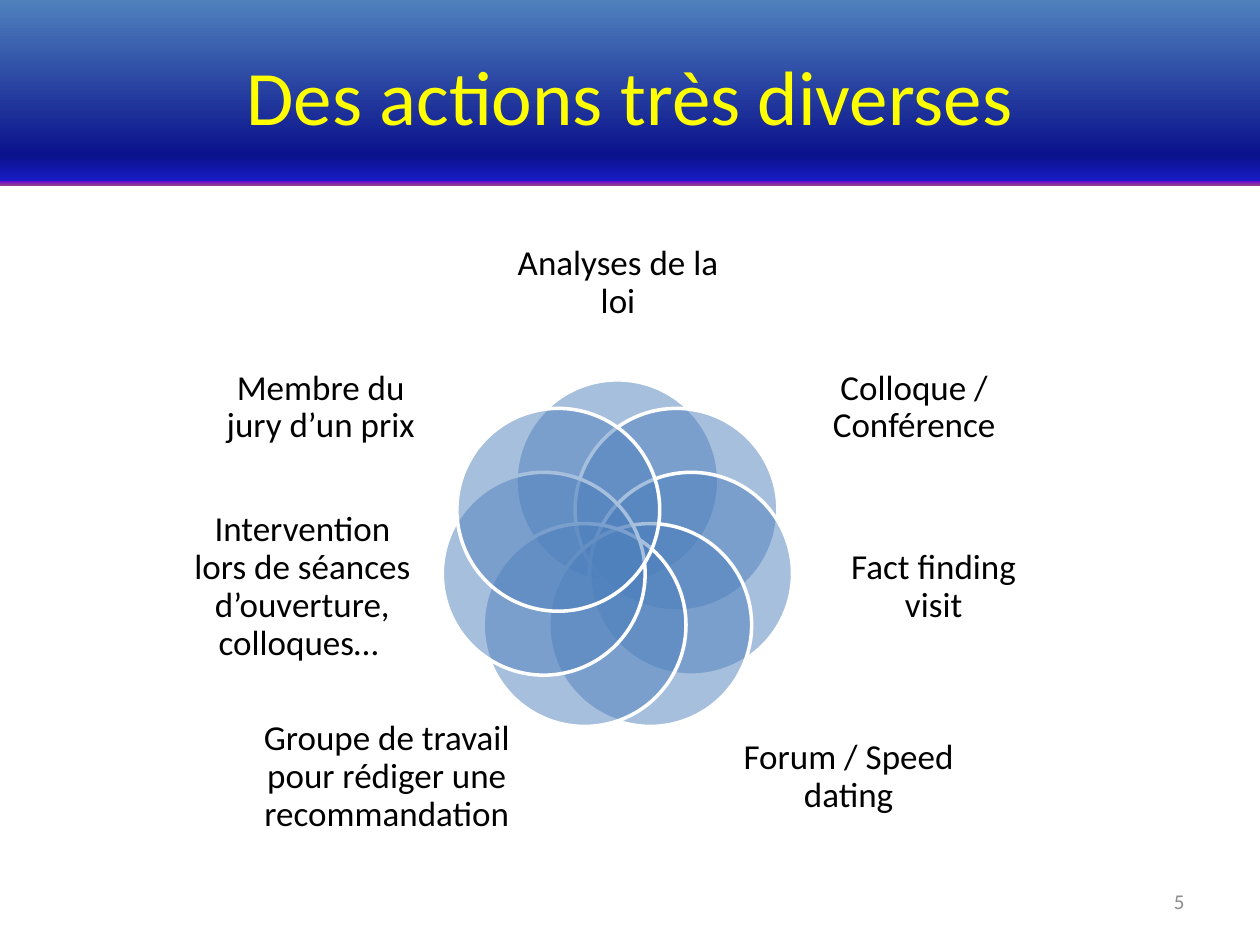
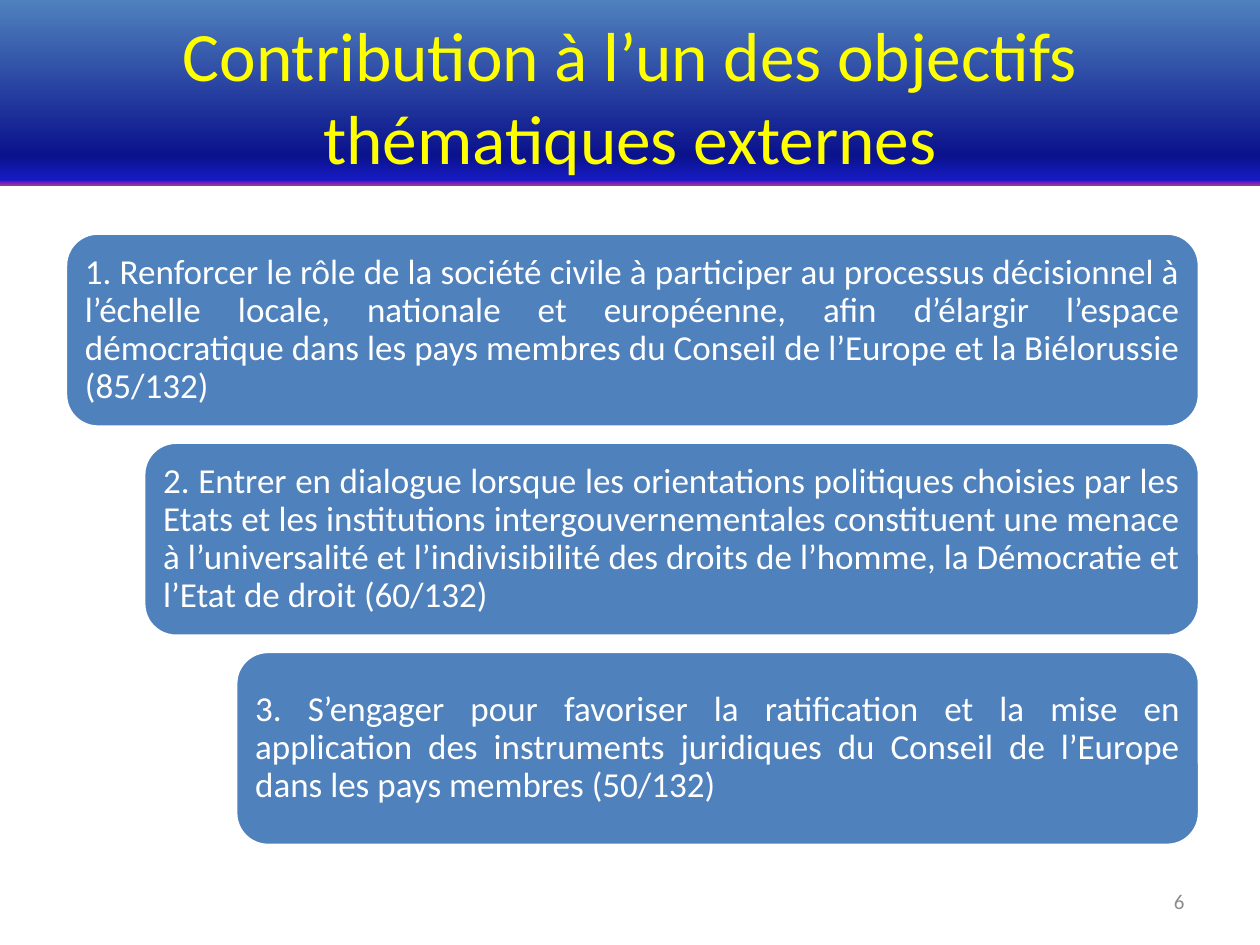
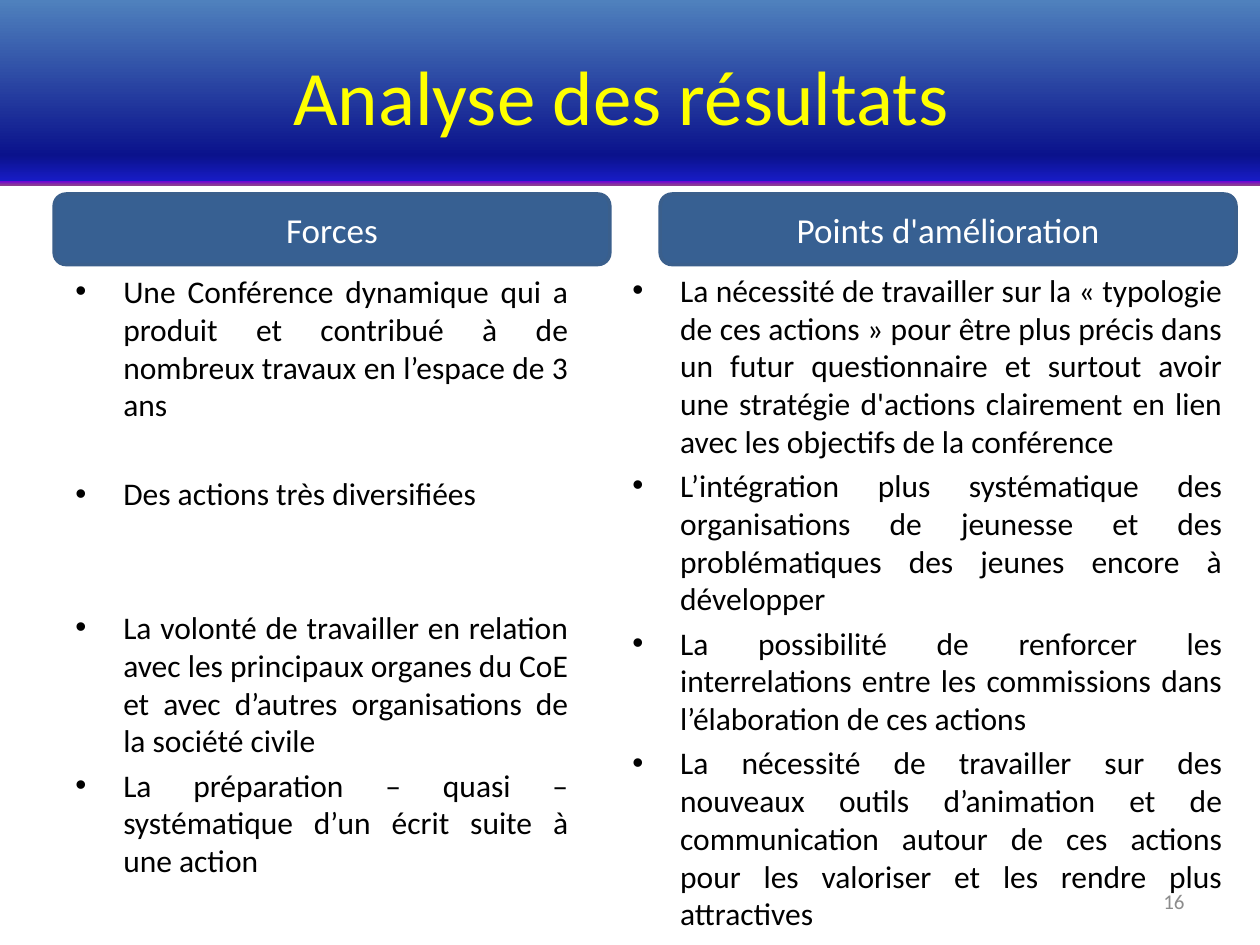
from math import cos, radians, sin

from lxml import etree
from pptx import Presentation
from pptx.dml.color import RGBColor
from pptx.enum.shapes import MSO_SHAPE
from pptx.enum.text import MSO_ANCHOR, PP_ALIGN
from pptx.oxml.ns import qn
from pptx.util import Inches, Pt

FONT = "Calibri"
BLUE = RGBColor(0x4F, 0x81, 0xBD)
DARK_BLUE = RGBColor(0x37, 0x60, 0x92)
EDGE_BLUE = RGBColor(0x3A, 0x5F, 0x8C)
YELLOW = RGBColor(0xFF, 0xFF, 0x00)
WHITE = RGBColor(0xFF, 0xFF, 0xFF)
BLACK = RGBColor(0x00, 0x00, 0x00)
GREY = RGBColor(0x8C, 0x8C, 0x8C)
BAND_STOPS = [
    (0, BLUE),
    (84, RGBColor(0x0A, 0x12, 0x8C)),
    (98, RGBColor(0x18, 0x1C, 0xC7)),
    (98, RGBColor(0x70, 0x05, 0xD4)),
    (100, RGBColor(0x8C, 0x3D, 0x91)),
]

RECTANGLE = MSO_SHAPE.RECTANGLE
ROUNDED = MSO_SHAPE.ROUNDED_RECTANGLE
OVAL = MSO_SHAPE.OVAL
TOP, MIDDLE = MSO_ANCHOR.TOP, MSO_ANCHOR.MIDDLE
CENTER, RIGHT, JUSTIFY = PP_ALIGN.CENTER, PP_ALIGN.RIGHT, PP_ALIGN.JUSTIFY

ACTIONS = [
    ("Analyses de la loi", 3.98, 1.75, 1.85, 0.99),
    ("Colloque / Conférence", 6.38, 2.69, 1.75, 1.09),
    ("Fact finding visit", 6.55, 4.08, 1.72, 1.16),
    ("Forum / Speed dating", 5.81, 5.64, 1.85, 1.06),
    ("Groupe de travail pour rédiger une recommandation", 1.85, 5.64, 2.44, 1.06),
    ("Intervention lors de séances d’ouverture, colloques… ", 1.54, 4.08, 1.72, 1.16),
    ("Membre du jury d’un prix", 1.67, 2.69, 1.75, 1.09),
]
OBJECTIVES = [
    (0.52, "1. Renforcer le rôle de la société civile à participer au processus "
           "décisionnel à l’échelle locale, nationale et européenne, afin d’élargir "
           "l’espace démocratique dans les pays membres du Conseil de l’Europe et la "
           "Biélorussie (85/132)"),
    (1.14, "2. Entrer en dialogue lorsque les orientations politiques choisies par les "
           "Etats et les institutions intergouvernementales constituent une menace à "
           "l’universalité et l’indivisibilité des droits de l’homme, la Démocratie et "
           "l’Etat de droit (60/132)"),
    (1.87, "3. S’engager pour favoriser la ratification et la mise en application des "
           "instruments juridiques du Conseil de l’Europe dans les pays membres (50/132)"),
]
STRENGTHS = [
    (0, "Une Conférence dynamique qui a produit et contribué à de nombreux travaux en "
        "l’espace de 3 ans "),
    (29.2, "Des actions très diversifiées"),
    (54.8, "La volonté de travailler en relation avec les principaux organes du CoE et "
           "avec d’autres organisations de la société civile"),
    (3.6, "La préparation – quasi – systématique d’un écrit suite à une action"),
]
IMPROVEMENTS = [
    (0, "La nécessité de travailler sur la « typologie de ces actions » pour être plus "
        "précis dans un futur questionnaire et surtout avoir une stratégie d'actions "
        "clairement en lien avec les objectifs de la conférence"),
    (3.6, "L’intégration plus systématique des organisations de jeunesse et des "
          "problématiques des jeunes encore à développer "),
    (3.6, "La possibilité de renforcer les interrelations entre les commissions dans "
          "l’élaboration de ces actions"),
    (3.6, "La nécessité de travailler sur des nouveaux outils d’animation et de "
          "communication autour de ces actions pour les valoriser et les rendre plus "
          "attractives"),
]


class DeckBuilder:
    def __init__(self):
        self.deck = Presentation()
        self.deck.slide_width = Inches(10)
        self.deck.slide_height = Inches(7.5)
        self.page = None

    def start_page(self, title, number, title_size=44):
        self.page = self.deck.slides.add_slide(self.deck.slide_layouts[6])
        self.band()
        self.text(title, 0.5, 0.13, 9, 1.25, title_size, YELLOW)
        self.text(str(number), 7.17, 6.95, 2.33, 0.4, 12, GREY, RIGHT)

    def shape(self, kind, left, top, width, height, fill=None, line=None):
        shape = self.page.shapes.add_shape(
            kind, Inches(left), Inches(top), Inches(width), Inches(height))
        shape.shadow.inherit = False
        if fill is not None:
            shape.fill.solid()
            shape.fill.fore_color.rgb = fill
        if line is None:
            shape.line.fill.background()
        else:
            shape.line.color.rgb = line
            shape.line.width = Pt(2)
        return shape

    def band(self):
        band = self.shape(RECTANGLE, 0, 0, 10, 1.47)
        band.fill.gradient()
        band.fill.gradient_angle = 270
        stops = next(band.element.iter(qn("a:gsLst")))
        for stop in list(stops):
            stops.remove(stop)
        for position, color in BAND_STOPS:
            stop = etree.SubElement(stops, qn("a:gs"), pos=str(position * 1000))
            etree.SubElement(stop, qn("a:srgbClr"), val=str(color))

    def petal(self, center_x, center_y, diameter):
        petal = self.shape(OVAL, center_x - diameter / 2, center_y - diameter / 2,
                           diameter, diameter, BLUE, WHITE)
        color = next(petal.element.spPr.iter(qn("a:srgbClr")))
        etree.SubElement(color, qn("a:alpha"), val="50000")

    def frame(self, box, anchor, inset=None):
        frame = box.text_frame
        frame.word_wrap = True
        frame.vertical_anchor = anchor
        if inset is not None:
            frame.margin_left = frame.margin_right = Inches(inset)
            frame.margin_top = frame.margin_bottom = Inches(inset)
        return frame

    def style(self, para, size, color, align, spacing=None):
        para.alignment = align
        if spacing:
            para.line_spacing = spacing
        para.font.name = FONT
        para.font.size = Pt(size)
        para.font.color.rgb = color

    def text_box(self, left, top, width, height):
        return self.page.shapes.add_textbox(
            Inches(left), Inches(top), Inches(width), Inches(height))

    def text(self, words, left, top, width, height, size, color,
             align=CENTER, inset=None, spacing=None):
        frame = self.frame(self.text_box(left, top, width, height), MIDDLE, inset)
        frame.text = words
        self.style(frame.paragraphs[0], size, color, align, spacing)

    def panel(self, words, left, top, width, height, fill, line,
              align=CENTER, inset=None, spacing=None):
        panel = self.shape(ROUNDED, left, top, width, height, fill, line)
        frame = self.frame(panel, MIDDLE, inset)
        frame.text = words
        self.style(frame.paragraphs[0], 20, WHITE, align, spacing)

    def bullets(self, items, left, top, width, height):
        frame = self.frame(self.text_box(left, top, width, height), TOP)
        for index, (space_before, words) in enumerate(items):
            para = frame.add_paragraph() if index else frame.paragraphs[0]
            para.text = words
            properties = para._p.get_or_add_pPr()
            properties.set("marL", str(Inches(0.38)))
            properties.set("indent", str(-Inches(0.38)))
            etree.SubElement(properties, qn("a:buFont"), typeface="Arial")
            etree.SubElement(properties, qn("a:buChar"), char="•")
            if space_before:
                para.space_before = Pt(space_before)
            self.style(para, 18, BLACK, JUSTIFY)


def add_actions(builder):
    builder.start_page("Des actions très diverses", 5)
    hub_x, hub_y, radius = 4.9, 4.42, 0.6
    for index, (words, left, top, width, height) in enumerate(ACTIONS):
        angle = radians(360 / len(ACTIONS) * index)
        builder.petal(hub_x + radius * sin(angle), hub_y - radius * cos(angle), 1.61)
        builder.text(words, left, top, width, height, 20, BLACK, inset=0, spacing=0.9)


def add_objectives(builder):
    builder.start_page("Contribution à l’un des objectifs thématiques externes", 6, 39.6)
    right_edge, first_top, step = 9.52, 1.85, 1.66
    for index, (left, words) in enumerate(OBJECTIVES):
        builder.panel(words, left, first_top + step * index, right_edge - left, 1.54,
                      BLUE, WHITE, JUSTIFY, 0.08, 0.9)


def add_results(builder):
    builder.start_page("Analyse des résultats ", 16)
    builder.bullets(STRENGTHS, 0.5, 2.11, 4.11, 4.95)
    builder.bullets(IMPROVEMENTS, 4.92, 2.1, 4.88, 4.96)
    for words, left, width in (("Forces", 0.43, 4.41), ("Points d'amélioration", 5.24, 4.57)):
        builder.panel(words, left, 1.54, width, 0.56, DARK_BLUE, EDGE_BLUE)


def main():
    builder = DeckBuilder()
    add_actions(builder)
    add_objectives(builder)
    add_results(builder)
    builder.deck.save("out.pptx")


if __name__ == "__main__":
    main()
